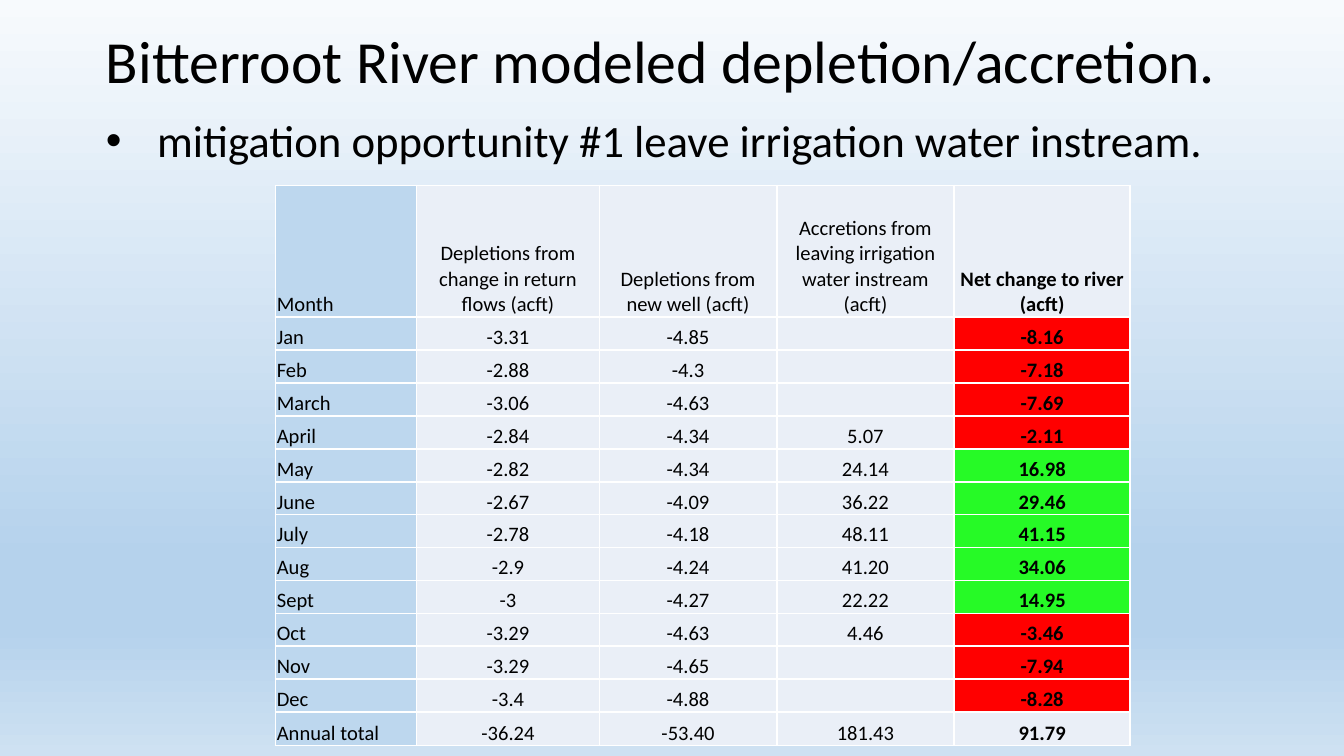
from dataclasses import dataclass

from lxml import etree
from pptx import Presentation
from pptx.dml.color import RGBColor
from pptx.enum import text
from pptx.oxml import ns
from pptx.util import Inches, Pt


@dataclass(frozen=True)
class Theme:
    font: str = "Calibri"
    title: int = 32
    bullet: int = 24
    cell: int = 11
    ink: str = "000000"
    month: str = "BDD7EE"
    plain: str = "EAEFF7"
    loss: str = "FF0000"
    gain: str = "26FA26"
    border: str = "FFFFFF"
    backdrop: tuple = ((0, "F7FAFD"), (74, "B5D2EC"), (83, "B5D2EC"), (100, "CEE1F2"))


@dataclass(frozen=True)
class Row:
    month: str
    flows: str
    well: str
    accretion: str
    net: str

    def values(self) -> tuple:
        return self.month, self.flows, self.well, self.accretion, self.net


THEME = Theme()
HEADER = Row("Month", "Depletions from change in return flows (acft)",
             "Depletions from new well (acft)",
             "Accretions from leaving irrigation water instream\n(acft)",
             "Net change to river (acft)")
MONTHS = [
    Row("Jan", "-3.31", "-4.85", "", "-8.16"),
    Row("Feb", "-2.88", "-4.3", "", "-7.18"),
    Row("March", "-3.06", "-4.63", "", "-7.69"),
    Row("April", "-2.84", "-4.34", "5.07", "-2.11"),
    Row("May", "-2.82", "-4.34", "24.14", "16.98"),
    Row("June", "-2.67", "-4.09", "36.22", "29.46"),
    Row("July", "-2.78", "-4.18", "48.11", "41.15"),
    Row("Aug", "-2.9", "-4.24", "41.20", "34.06"),
    Row("Sept", "-3", "-4.27", "22.22", "14.95"),
    Row("Oct", "-3.29", "-4.63", "4.46", "-3.46"),
    Row("Nov", "-3.29", "-4.65", "", "-7.94"),
    Row("Dec", "-3.4", "-4.88", "", "-8.28"),
]
TOTAL = Row("Annual total", "-36.24", "-53.40", "181.43", "91.79")
COL_WIDTHS = (1.05, 1.36, 1.32, 1.32, 1.31)
TABLE_HEIGHT, HEADER_HEIGHT, TOTAL_HEIGHT = 4.17, 0.98, 0.25


def add_run(p, words: str, size: int, bold: bool = False) -> None:
    r = p.add_run()
    r.text = words
    r.font.name, r.font.size, r.font.bold = THEME.font, Pt(size), bold
    r.font.color.rgb = RGBColor.from_string(THEME.ink)


def add_color(parent, color: str) -> None:
    etree.SubElement(parent, ns.qn("a:srgbClr"), val=color)


def set_background(s) -> None:
    fill = s.background.fill
    fill.gradient()
    fill.gradient_angle = 270  # counter-clockwise: runs from top to bottom
    stops = s.background._cSld.find(".//" + ns.qn("a:gsLst"))
    for stop in list(stops):
        stops.remove(stop)
    for position, color in THEME.backdrop:
        add_color(etree.SubElement(stops, ns.qn("a:gs"), pos=str(position * 1000)), color)


def add_heading(s) -> None:
    sp = s.shapes.add_textbox(Inches(0.69), Inches(0.19), Inches(8.62), Inches(1.03))
    tf = sp.text_frame
    tf.word_wrap = True
    title, bullet = tf.paragraphs[0], tf.add_paragraph()
    for p in (title, bullet):
        p.line_spacing, p.space_after = 0.9, Pt(12)
    add_run(title, "Bitterroot River modeled depletion/accretion.", THEME.title)
    add_run(bullet, "mitigation opportunity #1 leave irrigation water instream.", THEME.bullet)

    # Hanging bullet
    pPr = bullet._p.get_or_add_pPr()
    indent = Inches(0.38)
    pPr.set("marL", str(indent))
    pPr.set("indent", str(-indent))
    etree.SubElement(pPr, ns.qn("a:buFont"), typeface="Arial")
    etree.SubElement(pPr, ns.qn("a:buChar"), char="•")


def add_borders(cell) -> None:
    tcPr = cell._tc.get_or_add_tcPr()
    for side in ("a:lnL", "a:lnR", "a:lnT", "a:lnB"):
        ln = etree.SubElement(tcPr, ns.qn(side), w=str(Pt(1)))
        add_color(etree.SubElement(ln, ns.qn("a:solidFill")), THEME.border)


def fill_cell(cell, words: str, color: str, centered: bool, bold: bool) -> None:
    add_borders(cell)
    cell.fill.solid()
    cell.fill.fore_color.rgb = RGBColor.from_string(color)
    cell.vertical_anchor = text.MSO_ANCHOR.BOTTOM
    cell.margin_left = cell.margin_right = cell.margin_top = Inches(0.01)
    cell.margin_bottom = 0
    tf = cell.text_frame
    for i, line in enumerate(words.split("\n")):
        p = tf.add_paragraph() if i else tf.paragraphs[0]
        p.alignment = text.PP_ALIGN.CENTER if centered else text.PP_ALIGN.LEFT
        if line:
            add_run(p, line, THEME.cell, bold)
        else:  # keeps an empty cell from stretching its row
            etree.SubElement(p._p, ns.qn("a:endParaRPr"), sz=str(THEME.cell * 100))


def cell_color(row: Row, column: int) -> str:
    if column == 0:
        return THEME.month
    if column == len(COL_WIDTHS) - 1 and row in MONTHS:
        return THEME.loss if float(row.net) < 0 else THEME.gain
    return THEME.plain


def add_water_table(s) -> None:
    rows = [HEADER, *MONTHS, TOTAL]
    month_height = (TABLE_HEIGHT - HEADER_HEIGHT - TOTAL_HEIGHT) / len(MONTHS)
    heights = [HEADER_HEIGHT] + [month_height] * len(MONTHS) + [TOTAL_HEIGHT]
    table = s.shapes.add_table(len(rows), len(COL_WIDTHS), Inches(2.05), Inches(1.38),
                               Inches(sum(COL_WIDTHS)), Inches(TABLE_HEIGHT)).table
    table.first_row = table.horz_banding = False
    for column, width in zip(table.columns, COL_WIDTHS):
        column.width = Inches(width)
    for i, (row, height) in enumerate(zip(rows, heights)):
        table.rows[i].height = Inches(height)
        for j, words in enumerate(row.values()):
            fill_cell(table.cell(i, j), words, cell_color(row, j),
                      centered=j > 0, bold=j == len(COL_WIDTHS) - 1)


def main() -> None:
    prs = Presentation()
    prs.slide_width = Inches(10)
    prs.slide_height = prs.slide_width * 9 // 16
    s = prs.slides.add_slide(prs.slide_layouts[6])
    set_background(s)
    add_water_table(s)
    add_heading(s)
    prs.save("out.pptx")


if __name__ == "__main__":
    main()
